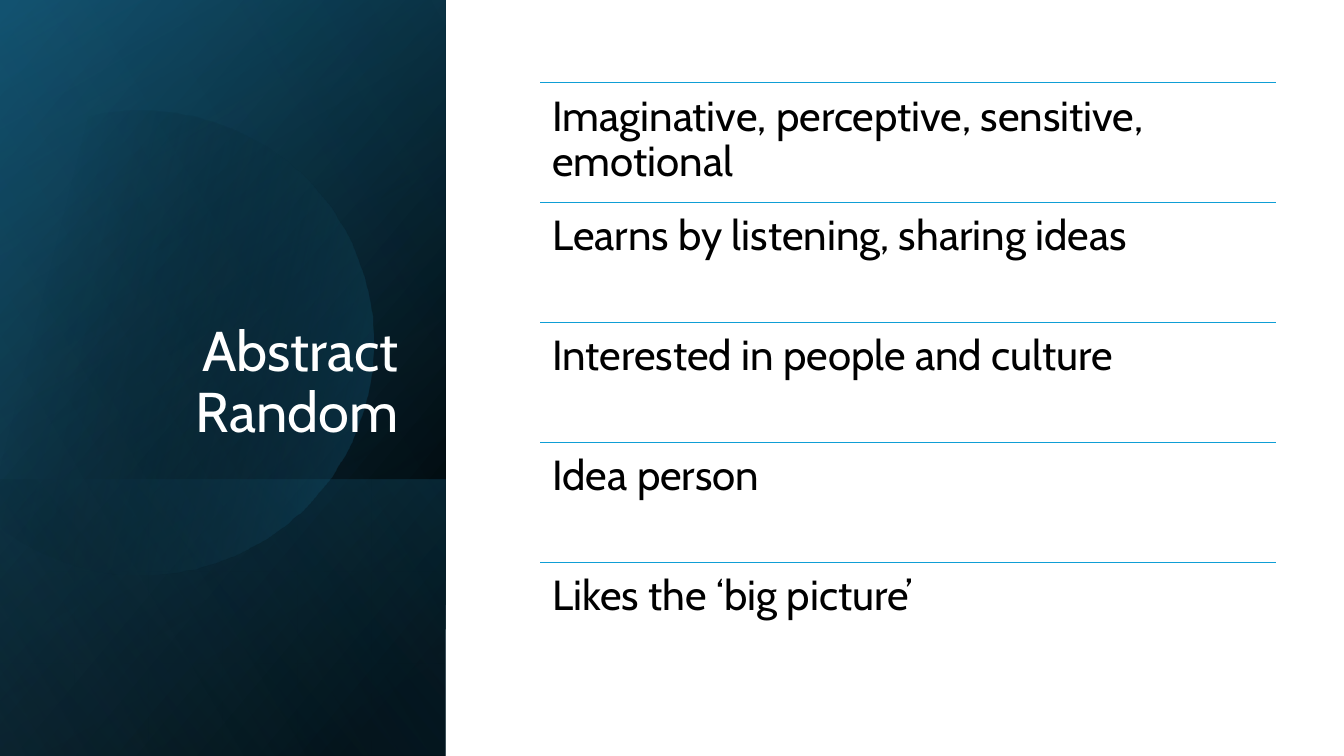
from math import acos, cos, sin

from lxml.etree import SubElement
from pptx import Presentation
from pptx.dml.color import RGBColor
from pptx.enum.shapes import MSO_CONNECTOR as Connector, MSO_SHAPE as Shape
from pptx.enum.text import MSO_ANCHOR as Anchor, MSO_AUTO_SIZE as AutoSize, PP_ALIGN as Align
from pptx.oxml.ns import qn
from pptx.util import Pt

PX = 9144
COLORS = {
    "black": "000000", "white": "FFFFFF", "navy": "104862",
    "teal": "156082", "sky": "46B1E1", "rule": "0F9ED5",
}


def paint_gradient(shape, stops, angle):
    shape.shadow.inherit = False
    shape.line.fill.background()
    shape.fill.gradient()
    shape.fill.gradient_angle = -angle % 360
    for stop, (position, color, opacity) in zip(shape.fill.gradient_stops, stops):
        stop.position = position / 100
        stop.color.rgb = RGBColor.from_string(COLORS[color])
    for node, (position, color, opacity) in zip(shape._element.spPr.iter(qn("a:srgbClr")), stops):
        if opacity < 100:
            SubElement(node, qn("a:alpha")).set("val", str(opacity * 1000))


def write_text(box, text, size, color, margins, formats):
    frame = box.text_frame
    frame.text = text
    for name, value in margins.items():
        setattr(frame, name, value)
    para = frame.paragraphs[0]
    for name, value in formats.items():
        setattr(para, name, value)
    span = para.runs[0]
    for name, value in {"name": "Cabin", "size": Pt(size)}.items():
        setattr(span.font, name, value)
    span.font.color.rgb = RGBColor.from_string(COLORS[color])


deck = Presentation()
deck.slide_width, deck.slide_height = 1333 * PX, 750 * PX
page = deck.slides.add_slide(deck.slide_layouts[5])

FULL_PANEL = (-154, 154, 750, 442)
LOWER_PANEL = (84, 392, 274, 442)
CIRCLE = "circle"
layers = [
    (FULL_PANEL, [(8, "black", 100), (100, "navy", 100)], 50),
    (FULL_PANEL, [(0, "black", 0), (99, "teal", 46)], 30),
    (LOWER_PANEL, [(2, "teal", 29), (100, "black", 30)], 130),
    (CIRCLE, [(18, "black", 0), (100, "teal", 43)], 14),
    (FULL_PANEL, [(0, "black", 0), (99, "sky", 11)], 120),
]

center_x, center_y, radius, steps = 140, 340, 230, 120
sweep = acos(-center_x / radius)
angles = [sweep * (2 * step / steps - 1) for step in range(steps + 1)]
arc = [(center_x + radius * cos(angle), center_y + radius * sin(angle)) for angle in angles]

for area, stops, angle in layers:
    if area == CIRCLE:
        builder = page.shapes.build_freeform(*arc[0], scale=PX)
        builder.add_line_segments(arc[1:], close=True)
        layer = builder.convert_to_shape()
    else:
        layer = page.shapes.add_shape(Shape.RECTANGLE, *[side * PX for side in area])
        layer.rotation = 90
        layer._element.spPr.xfrm.set("flipH", "1")
    paint_gradient(layer, stops, angle)

title = page.shapes.title
title_place = {"left": 64, "top": 184, "width": 341, "height": 262}
for name, value in title_place.items():
    setattr(title, name, value * PX)
write_text(
    title, "Abstract Random", 40, "white",
    {"vertical_anchor": Anchor.BOTTOM, "word_wrap": True, "auto_size": AutoSize.NONE},
    {"alignment": Align.RIGHT, "line_spacing": 0.9},
)
page.shapes._spTree.append(title._element)

traits = [
    "Imaginative, perceptive, sensitive, emotional",
    "Learns by listening, sharing ideas",
    "Interested in people and culture",
    "Idea person",
    "Likes the ‘big picture’",
]
list_left, list_top, list_width, list_height = 536, 82, 730, 596
row_height = list_height // len(traits)
row_margins = {f"margin_{side}": 12 * PX for side in ("left", "top", "right", "bottom")}
trait_list = page.shapes.add_group_shape()

for row, trait in enumerate(traits):
    left, top = list_left * PX, (list_top + list_height * row // len(traits)) * PX
    right = left + list_width * PX
    rule = trait_list.shapes.add_connector(Connector.STRAIGHT, left, top, right, top)
    rule.line.width = Pt(1)
    rule.line.color.rgb = RGBColor.from_string(COLORS["rule"])
    SubElement(rule._element.spPr, qn("a:effectLst"))
    box = trait_list.shapes.add_textbox(left, top, list_width * PX, row_height * PX)
    write_text(
        box, trait, 30, "black",
        {"word_wrap": True, "vertical_anchor": Anchor.TOP, **row_margins},
        {"alignment": Align.LEFT, "line_spacing": 0.9},
    )

deck.save("out.pptx")
